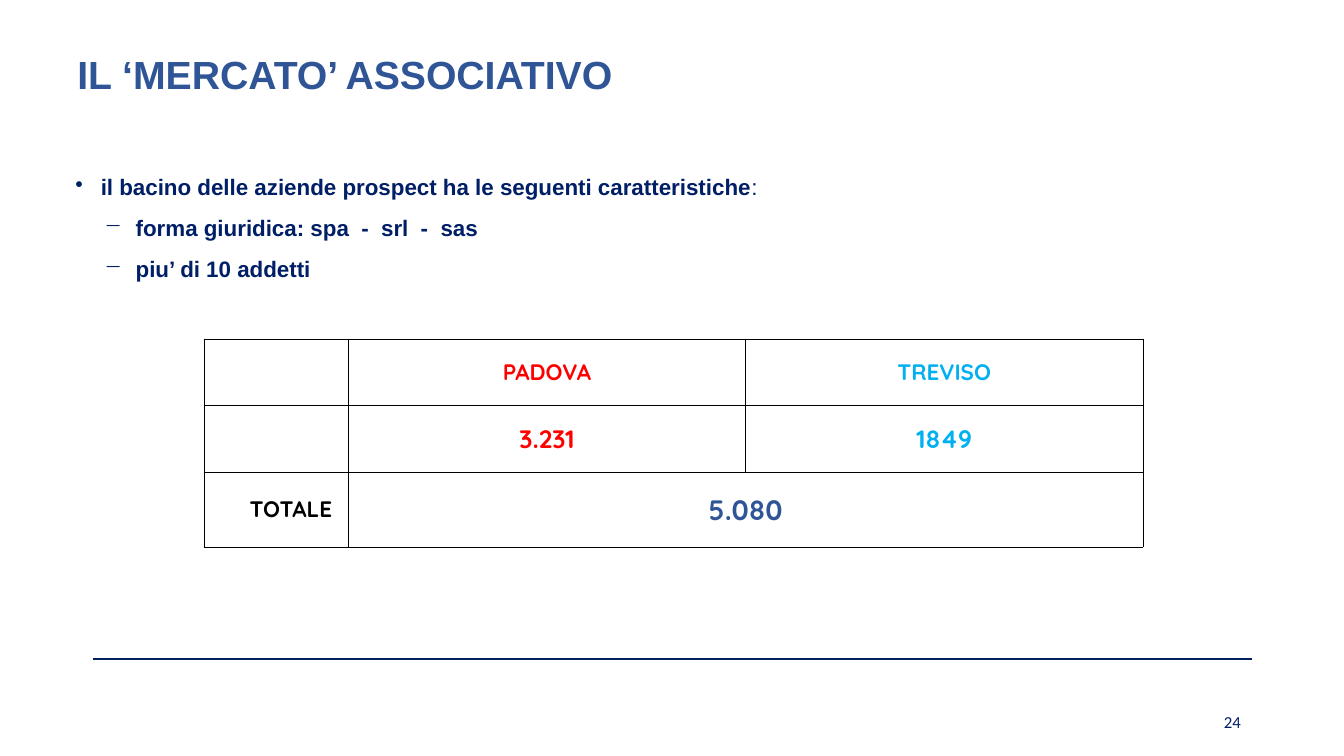
from dataclasses import dataclass

from lxml.etree import SubElement
from pptx import Presentation
from pptx.dml.color import RGBColor
from pptx.enum.shapes import MSO_CONNECTOR as Conn
from pptx.enum.text import MSO_ANCHOR as Anchor, PP_ALIGN as Align
from pptx.oxml.ns import qn
from pptx.util import Cm, Pt


@dataclass(frozen=True)
class Theme:
    """Colours, fonts and type sizes of the slide."""
    navy: str = "011F66"
    rule: str = "002060"
    blue: str = "2F5597"
    red: str = "FF0000"
    cyan: str = "00B0F0"
    black: str = "000000"
    text_font: str = "Arial"
    table_font: str = "Quicksand"
    page_font: str = "Calibri"
    title: int = 28
    total: int = 20
    value: int = 18
    body: int = 16
    page: int = 12


class Deck:
    """Holds the theme and the current slide, and draws its elements."""

    def __init__(self, prs, theme):
        """Add a blank slide to the presentation."""
        self.s = prs.slides.add_slide(prs.slide_layouts[6])
        self.t = theme

    def style(self, r, font, size, color, bold=True):
        """Format one run."""
        r.font.name, r.font.size, r.font.bold = font, Pt(size), bold
        r.font.color.rgb = RGBColor.from_string(color)

    def rule(self, x1, x2, y):
        """Draw a horizontal line."""
        c = self.s.shapes.add_connector(Conn.STRAIGHT, Cm(x1), Cm(y), Cm(x2), Cm(y))
        c.line.width = Pt(1)
        c.line.color.rgb = RGBColor.from_string(self.t.rule)
        SubElement(c._element.spPr, qn("a:effectLst"))

    def box(self, x, y, w, h, anchor=Anchor.TOP):
        """Add a wrapping text box and return its text frame."""
        tf = self.s.shapes.add_textbox(Cm(x), Cm(y), Cm(w), Cm(h)).text_frame
        tf.word_wrap = True
        tf.vertical_anchor = anchor
        return tf

    def label(self, text, box, font, size, color, bold=True, align=Align.LEFT,
              anchor=Anchor.TOP, spacing=1.0):
        """Add a single line of text."""
        p = self.box(*box, anchor).paragraphs[0]
        p.text, p.alignment, p.line_spacing = text, align, spacing
        self.style(p.runs[0], font, size, color, bold)

    def indent(self, p, margin, first=0):
        """Set the left margin and first-line indent of a paragraph."""
        pPr = p._p.get_or_add_pPr()
        pPr.set("marL", str(Cm(margin)))
        pPr.set("indent", str(Cm(first)))
        return pPr

    def bullets(self, box, lead, tail, items):
        """Add a lead point, its plain tail and the points below it."""
        tf = self.box(*box)
        for i, text in enumerate([lead, *items]):
            p = tf.add_paragraph() if i else tf.paragraphs[0]
            p.text = text
            pPr = self.indent(p, 1.52, -0.79) if i else self.indent(p, 0.64, -0.64)
            SubElement(pPr, qn("a:buChar"), char="−" if i else "•")
            if i:
                p.space_before = Pt(10)
            else:
                p.line_spacing = 1.6
            self.style(p.runs[0], self.t.text_font, self.t.body, self.t.navy)
        r = tf.paragraphs[0].add_run()
        r.text = tail
        self.style(r, self.t.text_font, self.t.body, self.t.navy, False)

    def borders(self, cell):
        """Give a cell thin black borders."""
        tcPr = cell._tc.get_or_add_tcPr()
        for side in "LRTB":
            ln = SubElement(tcPr, qn(f"a:ln{side}"), w=str(Pt(0.5)))
            fill = SubElement(ln, qn("a:solidFill"))
            SubElement(fill, qn("a:srgbClr"), val=self.t.black)

    def table(self, x, y, widths, heights, entries):
        """Add a bordered table; entries map (row, column) to text, size, colour."""
        shape = self.s.shapes.add_table(len(heights), len(widths), Cm(x), Cm(y),
                                        Cm(sum(widths)), Cm(sum(heights)))
        tbl = shape.table
        tbl.first_row = tbl.horz_banding = False
        for col, w in zip(tbl.columns, widths):
            col.width = Cm(w)
        for row, h in zip(tbl.rows, heights):
            row.height = Cm(h)
        for cell in tbl.iter_cells():
            self.borders(cell)
            cell.fill.background()
            cell.margin_left = cell.margin_right = 0
            cell.margin_top = cell.margin_bottom = 0
            cell.vertical_anchor = Anchor.MIDDLE
        for (i, j), (text, size, color) in entries.items():
            p = tbl.cell(i, j).text_frame.paragraphs[0]
            p.text, p.alignment = text, Align.CENTER
            self.style(p.runs[0], self.t.table_font, size, color)
        return tbl


def main():
    """Build the slide and save it."""
    prs = Presentation()
    prs.slide_width, prs.slide_height = Cm(33.87), Cm(19.05)
    t = Theme()
    d = Deck(prs, t)
    d.rule(2.34, 31.55, 16.61)
    d.label("24", (28.5, 17.55, 3.02, 1.02), t.page_font, t.page, t.navy,
            bold=False, align=Align.RIGHT, anchor=Anchor.BOTTOM)
    d.label("IL ‘MERCATO’ ASSOCIATIVO", (1.7, 1.27, 30.48, 3.18),
            t.text_font, t.title, t.blue, spacing=0.9)
    d.bullets((1.65, 3.84, 30.48, 13.18),
              "il bacino delle aziende prospect ha le seguenti caratteristiche", ":",
              ["forma giuridica: spa  -  srl  -  sas", "piu’ di 10 addetti"])
    tbl = d.table(5.14, 8.54, [3.64, 10.01, 10.01], [1.68, 1.68, 1.88], {
        (0, 1): ("PADOVA", t.body, t.red),
        (0, 2): ("TREVISO", t.body, t.cyan),
        (1, 1): ("3.231", t.value, t.red),
        (1, 2): ("1849", t.value, t.cyan),
        (2, 0): ("TOTALE", t.body, t.black),
        (2, 1): ("5.080", t.total, t.blue),
    })
    tbl.cell(2, 1).merge(tbl.cell(2, 2))
    d.indent(tbl.cell(2, 0).text_frame.paragraphs[0], 0.74)
    prs.save("out.pptx")


if __name__ == "__main__":
    main()
